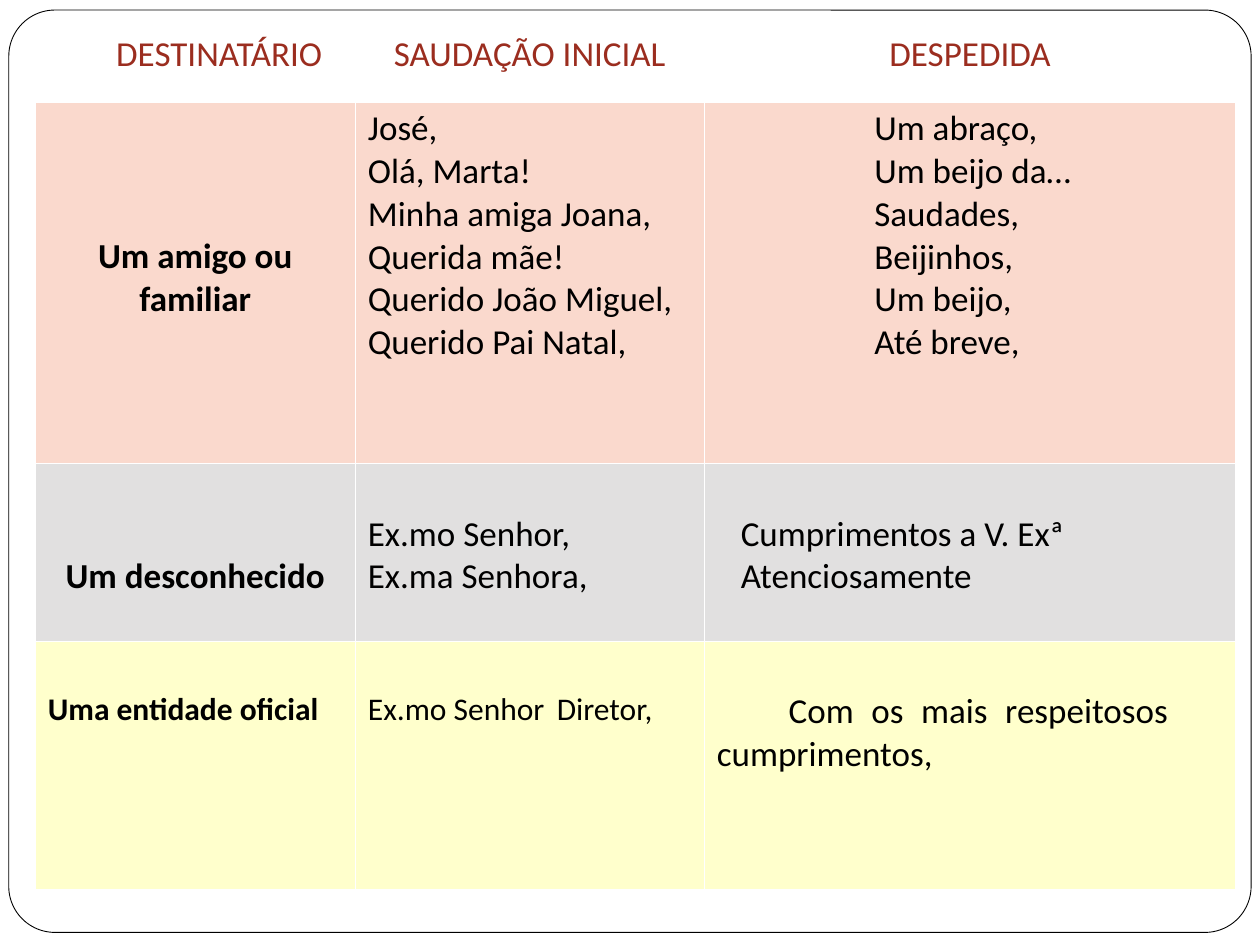
from dataclasses import dataclass

from lxml.etree import SubElement
from pptx import Presentation
from pptx.dml.color import RGBColor
from pptx.enum.shapes import MSO_SHAPE
from pptx.enum.text import PP_ALIGN
from pptx.oxml.ns import qn
from pptx.util import Inches, Pt


@dataclass(frozen=True)
class Theme:
    font: str = "Calibri"
    size: int = 20
    small: int = 18
    text: str = "000000"
    heading: str = "9B2D1F"
    white: str = "FFFFFF"
    friend: str = "FAD9CD"
    stranger: str = "E1E0E0"
    official: str = "FFFFCC"
    border: float = 1
    header_border: float = 3


@dataclass(frozen=True)
class Entry:
    lines: tuple
    top: float = 0.05           # inset above the first line
    right: float = 0.1          # inset at the right
    left: float = 0             # paragraph left margin
    first: float = 0            # first-line indent
    tab: float = 0              # tab stop
    align: PP_ALIGN = PP_ALIGN.LEFT
    size: int = 20
    bold: bool = False
    color: str = "000000"


THEME = Theme()
COLUMNS = (2.54, 2.77, 4.22)
ROWS = (0.59, 2.88, 1.41, 1.97)
ONE_DOWN, TWO_DOWN, THREE_DOWN = (round(0.05 + 0.34 * n, 2) for n in (1, 2, 3))


def heading(label, left=0):
    return Entry((label,), left=left, align=PP_ALIGN.CENTER, color=THEME.heading)


def recipient(label, top, align=PP_ALIGN.CENTER, size=THEME.size):
    return Entry((label,), top=top, align=align, size=size, bold=True)


# Each row: fill colour and its three entries
CONTENT = (
    (THEME.white, (
        heading("DESTINATÁRIO", left=0.38),
        heading("SAUDAÇÃO INICIAL"),
        heading("DESPEDIDA"))),
    (THEME.friend, (
        recipient("Um amigo ou familiar", THREE_DOWN),
        Entry(("José,", "Olá, Marta!", "Minha amiga Joana,", "Querida mãe!",
               "Querido João Miguel,", "Querido Pai Natal,")),
        Entry(("Um abraço,", "Um beijo da…", "Saudades,", "Beijinhos,",
               "Um beijo,", "Até breve,"), left=1.25))),
    (THEME.stranger, (
        recipient("Um desconhecido", TWO_DOWN),
        Entry(("Ex.mo Senhor,", "Ex.ma Senhora,"), top=ONE_DOWN),
        Entry(("Cumprimentos a V. Exª", "Atenciosamente"), top=ONE_DOWN, left=0.19))),
    (THEME.official, (
        recipient("Uma entidade oficial", ONE_DOWN, PP_ALIGN.JUSTIFY, THEME.small),
        Entry(("Ex.mo Senhor\tDiretor,",), top=ONE_DOWN, tab=1.58, size=THEME.small),
        Entry(("Com os mais respeitosos cumprimentos,",), top=ONE_DOWN, right=0.54,
              first=0.57, align=PP_ALIGN.JUSTIFY))),
)


def add_frame(page):
    frame = page.shapes.add_shape(MSO_SHAPE.ROUNDED_RECTANGLE, Inches(0.07),
                                  Inches(0.08), Inches(9.86), Inches(7.32))
    frame.adjustments[0] = 0.05
    frame.shadow.inherit = False
    frame.fill.solid()
    frame.fill.fore_color.rgb = RGBColor.from_string(THEME.white)
    frame.line.color.rgb = RGBColor.from_string(THEME.text)
    frame.line.width = Pt(0.5)


def add_borders(cell, widths):
    properties = cell._tc.get_or_add_tcPr()
    for side, width in widths.items():
        line = SubElement(properties, qn(f"a:ln{side}"), w=str(Pt(width)))
        fill = SubElement(line, qn("a:solidFill"))
        SubElement(fill, qn("a:srgbClr"), val=THEME.white)


def format_paragraph(para, entry):
    para.alignment = entry.align
    properties = para._p.get_or_add_pPr()
    properties.set("marL", str(Inches(entry.left)))
    properties.set("indent", str(Inches(entry.first)))
    if entry.tab:
        tabs = SubElement(properties, qn("a:tabLst"))
        SubElement(tabs, qn("a:tab"), pos=str(Inches(entry.tab)), algn="l")
    for span in para.runs:
        span.font.name = THEME.font
        span.font.size = Pt(entry.size)
        span.font.bold = entry.bold
        span.font.color.rgb = RGBColor.from_string(entry.color)


def fill_cell(cell, entry, color):
    cell.fill.solid()
    cell.fill.fore_color.rgb = RGBColor.from_string(color)
    cell.margin_left, cell.margin_right = Inches(0.1), Inches(entry.right)
    cell.margin_top, cell.margin_bottom = Inches(entry.top), Inches(0.05)
    cell.text_frame.text = "\n".join(entry.lines)
    for para in cell.text_frame.paragraphs:
        format_paragraph(para, entry)


def add_greetings_table(page):
    table = page.shapes.add_table(len(ROWS), len(COLUMNS), Inches(0.28), Inches(0.21),
                                  Inches(sum(COLUMNS)), Inches(sum(ROWS))).table
    table.first_row = table.horz_banding = False
    for column, width in zip(table.columns, COLUMNS):
        column.width = Inches(width)
    for index, (color, entries) in enumerate(CONTENT):
        table.rows[index].height = Inches(ROWS[index])
        # The line under the header is shared by the first two rows
        widths = {"L": THEME.border, "R": THEME.border,
                  "T": THEME.header_border if index == 1 else THEME.border,
                  "B": THEME.header_border if index == 0 else THEME.border}
        for cell, entry in zip(table.rows[index].cells, entries):
            add_borders(cell, widths)
            fill_cell(cell, entry, color)


def main():
    deck = Presentation()
    deck.slide_width, deck.slide_height = Inches(10), Inches(7.5)
    page = deck.slides.add_slide(deck.slide_layouts[6])
    add_frame(page)
    add_greetings_table(page)
    deck.save("out.pptx")


if __name__ == "__main__":
    main()
